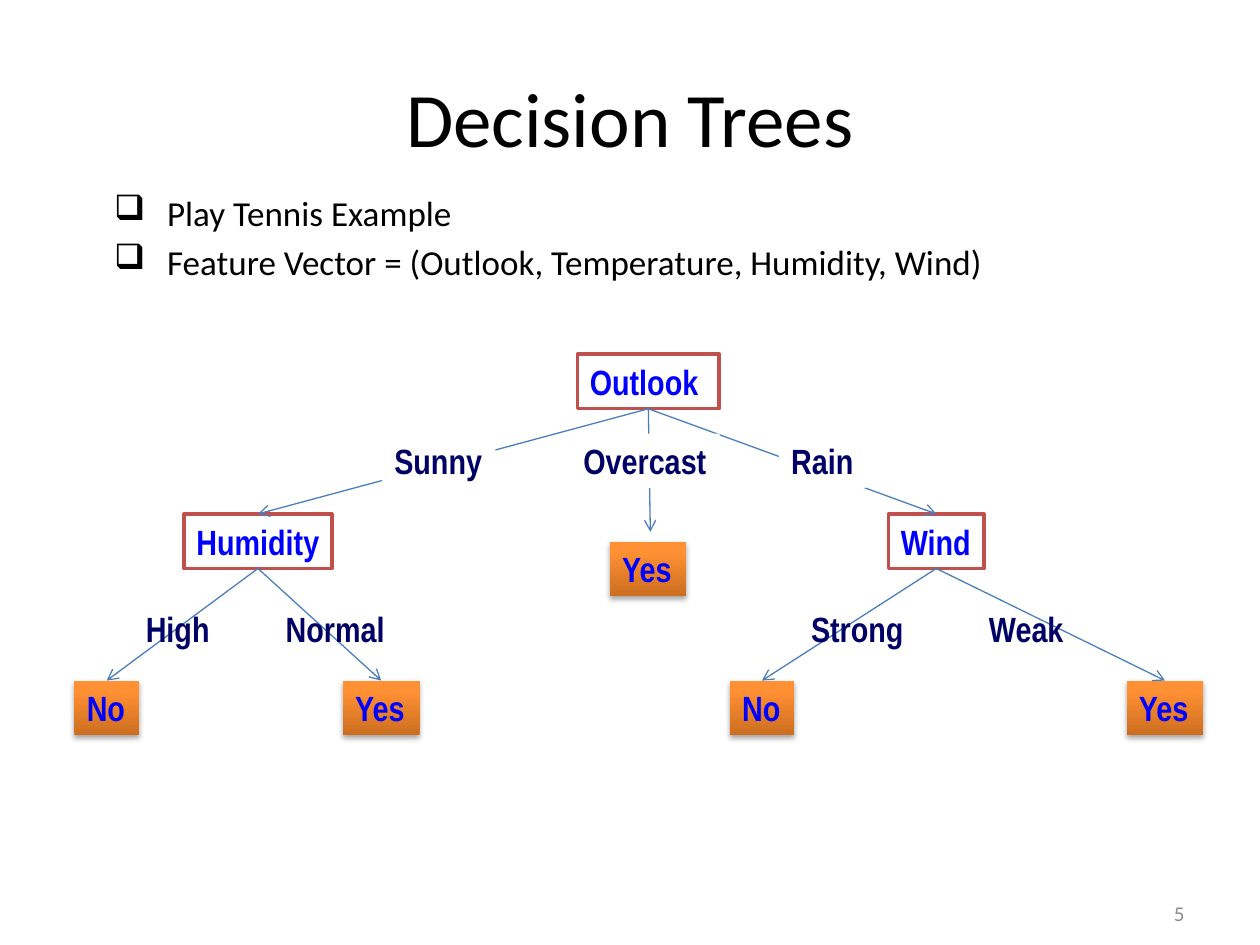
from dataclasses import dataclass

from lxml.etree import SubElement
from pptx import Presentation
from pptx.dml.color import RGBColor
from pptx.enum.shapes import MSO_CONNECTOR, MSO_SHAPE
from pptx.enum.text import MSO_ANCHOR, PP_ALIGN
from pptx.oxml.ns import qn
from pptx.util import Cm, Pt


@dataclass(frozen=True)
class Theme:
    body_font: str = "Calibri"
    tree_font: str = "Arial Narrow"
    title_size: float = 44
    text_size: float = 20
    number_size: float = 12
    black: str = "000000"
    grey: str = "8C8C8C"
    white: str = "FFFFFF"
    node_text: str = "0000FF"
    label_text: str = "000066"
    node_line: str = "C0504D"
    edge: str = "4B7EBC"
    leaf_stops: tuple = ((0, "CC6E20"), (80, "FF9034"), (100, "FF9136"))


def rgb(value):
    return RGBColor.from_string(value)


def write(tf, *lines, size, font, color, bold=False, align=PP_ALIGN.LEFT,
          anchor=MSO_ANCHOR.MIDDLE, wrap=True):
    """Fill a text frame with one paragraph per line."""
    tf.word_wrap = wrap
    tf.vertical_anchor = anchor
    for i, line in enumerate(lines):
        p = tf.add_paragraph() if i else tf.paragraphs[0]
        p.alignment = align
        r = p.add_run()
        r.text = line
        r.font.size = Pt(size)
        r.font.name = font
        r.font.bold = bold
        r.font.color.rgb = rgb(color)


class TreeSlide:
    HEIGHT = 1.1

    def __init__(self, prs, theme):
        self.theme = theme
        self.s = prs.slides.add_slide(prs.slide_layouts[6])

    def text(self, x, y, w, h, *lines, **fmt):
        sp = self.s.shapes.add_textbox(Cm(x), Cm(y), Cm(w), Cm(h))
        fmt = {"font": self.theme.body_font, "color": self.theme.black, **fmt}
        write(sp.text_frame, *lines, **fmt)
        return sp

    def bullets(self, x, y, w, h, *lines):
        sp = self.text(x, y, w, h, *lines, size=self.theme.text_size,
                       anchor=MSO_ANCHOR.TOP)
        for p in sp.text_frame.paragraphs:
            p.space_before = Pt(4)
            pPr = p._p.get_or_add_pPr()
            pPr.set("marL", str(Cm(1.22)))
            pPr.set("indent", str(Cm(-1.07)))
            SubElement(pPr, qn("a:buChar"), char="❑")

    def box(self, text, x, y, w, color):
        t = self.theme
        sp = self.s.shapes.add_shape(MSO_SHAPE.RECTANGLE, Cm(x), Cm(y),
                                     Cm(w), Cm(self.HEIGHT))
        sp.shadow.inherit = False
        sp.fill.solid()
        sp.fill.fore_color.rgb = rgb(t.white)
        sp.line.fill.background()
        write(sp.text_frame, text, size=t.text_size, font=t.tree_font,
              color=color, bold=True, wrap=False)
        return sp

    def node(self, text, x, y, w):
        sp = self.box(text, x, y, w, self.theme.node_text)
        sp.line.color.rgb = rgb(self.theme.node_line)
        sp.line.width = Pt(2)
        return sp

    def leaf(self, text, x, y):
        """Add an answer with an orange gradient and a soft shadow."""
        sp = self.box(text, x, y, {"Yes": 1.55, "No": 1.3}[text],
                      self.theme.node_text)
        sp.fill.gradient()
        sp.fill.gradient_angle = 90
        spPr = sp._element.spPr
        stops = spPr.find(f"{qn('a:gradFill')}/{qn('a:gsLst')}")
        for old in list(stops):
            stops.remove(old)
        for pos, color in self.theme.leaf_stops:
            gs = SubElement(stops, qn("a:gs"), pos=str(pos * 1000))
            SubElement(gs, qn("a:srgbClr"), val=color)
        shadow = SubElement(spPr.find(qn("a:effectLst")), qn("a:outerShdw"),
                            blurRad=str(Pt(3.1)), dist=str(Pt(1.8)),
                            dir="5400000", rotWithShape="0")
        black = SubElement(shadow, qn("a:srgbClr"), val=self.theme.black)
        SubElement(black, qn("a:alpha"), val="35000")
        return sp

    def boxed_label(self, text, x, y, w):
        self.box(text, x, y, w, self.theme.label_text)

    def label(self, text, x, y, w, align=PP_ALIGN.LEFT):
        t = self.theme
        self.text(x, y, w, self.HEIGHT, text, size=t.text_size, bold=True,
                  font=t.tree_font, color=t.label_text, align=align, wrap=False)

    def edge(self, parent, child=None, end=(0, 0)):
        """Draw an arrow from a parent to a child's top, or to a free end."""
        cx = self.s.shapes.add_connector(MSO_CONNECTOR.STRAIGHT, 0, 0,
                                         Cm(end[0]), Cm(end[1]))
        cx.begin_connect(parent, 2)
        if child is not None:
            cx.end_connect(child, 0)
        cx.line.color.rgb = rgb(self.theme.edge)
        cx.line.width = Pt(0.75)
        SubElement(cx.line._get_or_add_ln(), qn("a:tailEnd"), type="arrow")
        SubElement(cx._element.spPr, qn("a:effectLst"))


def main():
    prs = Presentation()
    prs.slide_width, prs.slide_height = Cm(25.4), Cm(19.05)
    theme = Theme()
    tree = TreeSlide(prs, theme)

    tree.text(1.27, 0.76, 22.86, 3.18, "Decision Trees",
              size=theme.title_size, align=PP_ALIGN.CENTER)
    tree.bullets(1.9, 3.73, 21.6, 12.93, "Play Tennis Example",
                 "Feature Vector = (Outlook, Temperature, Humidity, Wind)")
    number = tree.text(18.21, 17.65, 5.92, 1.02, "5", size=theme.number_size,
                       color=theme.grey, align=PP_ALIGN.RIGHT,
                       anchor=MSO_ANCHOR.BOTTOM)
    number.text_frame.margin_bottom = 0

    feature_y, leaf_y = 10.36, 13.72
    tree.leaf("Yes", 12.29, 10.92)
    humidity = tree.node("Humidity", 3.71, feature_y, 2.98)
    wind = tree.node("Wind", 17.91, feature_y, 1.93)
    outlook = tree.node("Outlook", 11.64, 7.14, 2.86)
    answers = [(parent, tree.leaf(text, x, leaf_y)) for parent, text, x in (
        (humidity, "No", 1.5), (humidity, "Yes", 6.91),
        (wind, "No", 14.71), (wind, "Yes", 22.71))]

    tree.edge(outlook, humidity)
    tree.edge(outlook, end=(13.11, 10.72))
    tree.edge(outlook, wind)
    for text, x, w in (("Rain", 15.7, 1.75), ("Sunny", 7.7, 2.29),
                       ("Overcast", 11.51, 3)):
        tree.boxed_label(text, x, 8.74, w)

    for parent, answer in answers:
        tree.edge(parent, answer)
    for text, x, w, align in (("High", 2.69, 1.8, PP_ALIGN.LEFT),
                              ("Weak", 19.51, 2.18, PP_ALIGN.RIGHT),
                              ("Strong", 16.1, 2.39, PP_ALIGN.LEFT),
                              ("Normal", 5.51, 2.51, PP_ALIGN.LEFT)):
        tree.label(text, x, 12.12, w, align)

    prs.save("out.pptx")


if __name__ == "__main__":
    main()
